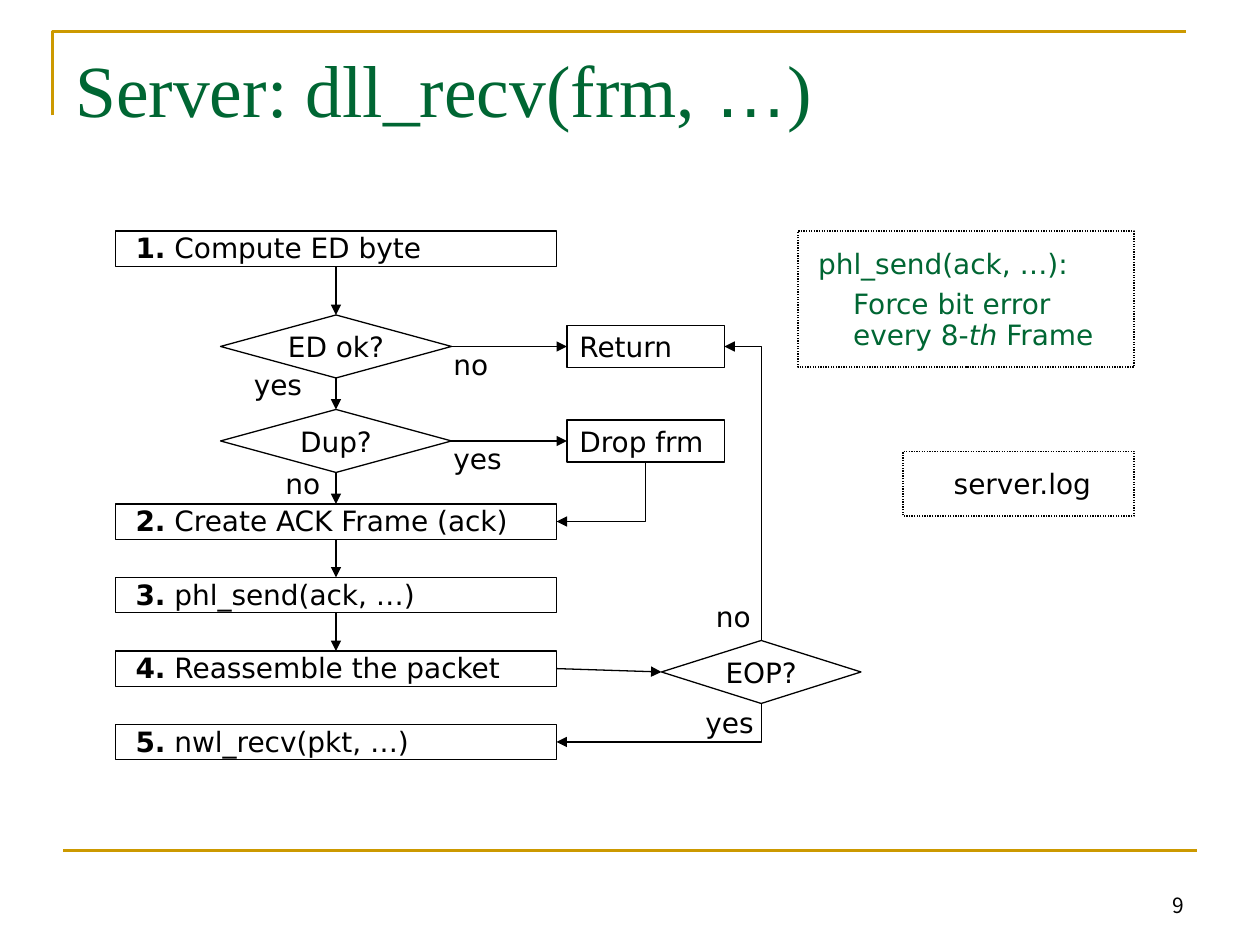
from lxml import etree
from pptx import Presentation
from pptx.dml.color import RGBColor
from pptx.enum import dml, shapes, text
from pptx.oxml import ns
from pptx.util import Pt

BLACK, GREEN, GOLD = "000000", "006633", "CC9900"
BODY, SERIF, SANS, NUMBER = "DejaVu Sans", "Times New Roman", "Arial", "Noto Sans CJK KR"
TOP, LEFT, BOTTOM, RIGHT = range(4)


def color(value):
    return RGBColor.from_string(value)


def style_line(line, value=BLACK, width=0.75):
    line.color.rgb = color(value)
    line.width = Pt(width)


def add_span(para, words, size=16, font=BODY, value=BLACK, bold=False, italic=False):
    span = para.add_run()
    span.text = words
    span.font.size, span.font.name = Pt(size), font
    span.font.color.rgb = color(value)
    span.font.bold, span.font.italic = bold, italic


def set_frame(box, insets=(7.2, 3.6, 7.2, 3.6), wrap=True, grow=False,
              anchor=text.MSO_ANCHOR.TOP, align=text.PP_ALIGN.LEFT):
    """Set up the text frame and return its first paragraph."""
    frame = box.text_frame
    frame.margin_left, frame.margin_top, frame.margin_right, frame.margin_bottom = map(Pt, insets)
    frame.word_wrap = wrap
    frame.auto_size = text.MSO_AUTO_SIZE.SHAPE_TO_FIT_TEXT if grow else text.MSO_AUTO_SIZE.NONE
    frame.vertical_anchor = anchor
    para = frame.paragraphs[0]
    para.alignment = align
    return para


def add_outline(page, kind, left, top, width, height):
    shape = page.shapes.add_shape(kind, Pt(left), Pt(top), Pt(width), Pt(height))
    shape.shadow.inherit = False
    shape.fill.background()
    style_line(shape.line)
    return shape


def add_step(page, top, number, words):
    box = add_outline(page, shapes.MSO_SHAPE.RECTANGLE, 66, top, 252, 20.16)
    para = set_frame(box, (11.5, 0, 0, 0), grow=True)
    add_span(para, f"{number}.", bold=True)
    add_span(para, " " + words)
    return box


def add_decision(page, left, top, width, words):
    box = add_outline(page, shapes.MSO_SHAPE.DIAMOND, left, top, width, 36)
    add_span(set_frame(box, wrap=False, anchor=text.MSO_ANCHOR.MIDDLE,
                       align=text.PP_ALIGN.CENTER), words)
    return box


def add_action(page, top, words):
    box = add_outline(page, shapes.MSO_SHAPE.RECTANGLE, 324, top, 90, 24)
    add_span(set_frame(box, wrap=False, anchor=text.MSO_ANCHOR.MIDDLE), words)
    return box


def add_note(page, left, top, width, height, right_inset, align=text.PP_ALIGN.LEFT):
    box = add_outline(page, shapes.MSO_SHAPE.RECTANGLE, left, top, width, height)
    box.line.dash_style = dml.MSO_LINE.ROUND_DOT
    return box, set_frame(box, (11.5, 8.6, right_inset, 8.6), grow=True, align=align)


def add_text(page, left, top, width, height, **frame):
    box = page.shapes.add_textbox(Pt(left), Pt(top), Pt(width), Pt(height))
    return set_frame(box, **frame)


def add_label(page, left, top, words, width, height=26.6, spacing=1.0, wrap=False):
    para = add_text(page, left, top, width, height, wrap=wrap, grow=True)
    para.line_spacing = spacing
    add_span(para, words)


def add_line(page, kind, start, end, value=BLACK, width=0.75):
    line = page.shapes.add_connector(kind, *map(Pt, (*start, *end)))
    style_line(line.line, value, width)
    etree.SubElement(line._element.spPr, ns.qn("a:effectLst"))
    return line


def add_head(line):
    etree.SubElement(line.line._get_or_add_ln(), ns.qn("a:tailEnd"), type="triangle")


def add_arrow(page, source, source_side, target, target_side):
    line = add_line(page, shapes.MSO_CONNECTOR.STRAIGHT, (0, 0), (0, 0))
    line.begin_connect(source, source_side)
    line.end_connect(target, target_side)
    add_head(line)


def add_corner(page, start, end):
    """Arrow that runs vertically from start, then left to end."""
    middle_x, middle_y = (start[0] + end[0]) / 2, (start[1] + end[1]) / 2
    half_x, half_y = (start[0] - end[0]) / 2, (end[1] - start[1]) / 2
    # The box is laid out before its quarter turn, so the sides swap
    line = add_line(page, shapes.MSO_CONNECTOR.ELBOW,
                    (middle_x - half_y, middle_y - half_x),
                    (middle_x + half_y, middle_y + half_x))
    properties = line._element.spPr
    properties.find(ns.qn("a:xfrm")).set("rot", "5400000")
    properties.find(ns.qn("a:prstGeom")).set("prst", "bentConnector2")
    add_head(line)


def add_page_frame(page):
    # Gold rules
    builder = page.shapes.build_freeform(Pt(30), Pt(66), scale=1.0)
    builder.add_line_segments([(Pt(30), Pt(18)), (Pt(678), Pt(18))], close=False)
    corner = builder.convert_to_shape()
    corner.shadow.inherit = False
    corner.fill.background()
    style_line(corner.line, GOLD, 1.5)
    add_line(page, shapes.MSO_CONNECTOR.STRAIGHT, (36, 486), (684, 486), GOLD, 1.5)

    # Page number and title
    number = add_text(page, 516, 492, 168, 36, anchor=text.MSO_ANCHOR.BOTTOM,
                      align=text.PP_ALIGN.RIGHT)
    add_span(number, "9", 12, NUMBER)
    title = add_text(page, 36, 21.6, 648, 90)
    for words, font in (("Server: dll_recv(frm, ", SERIF), ("…", SANS), (")", SERIF)):
        add_span(title, words, 42, font, GREEN)


def add_flow(page):
    # Steps, decisions and actions
    compute = add_step(page, 132, 1, "Compute ED byte")
    names = ("Create ACK Frame (ack)", "phl_send(ack, …)", "Reassemble the packet",
             "nwl_recv(pkt, …)")
    create, send, reassemble, _ = [
        add_step(page, 288 + 42 * i, i + 2, name) for i, name in enumerate(names)]
    valid = add_decision(page, 126, 180, 132, "ED ok?")
    duplicate = add_decision(page, 126, 234, 132, "Dup?")
    last = add_decision(page, 378, 366, 114, "EOP?")
    leave = add_action(page, 186, "Return")
    drop = add_action(page, 240, "Drop frm")

    # Straight arrows
    column = (compute, valid, duplicate, create, send, reassemble)
    for upper, lower in zip(column, column[1:]):
        add_arrow(page, upper, BOTTOM, lower, TOP)
    for source, target in ((valid, leave), (duplicate, drop), (reassemble, last)):
        add_arrow(page, source, RIGHT, target, LEFT)

    # Cornered arrows
    add_corner(page, (369, 264), (318, 298))
    add_corner(page, (435, 402), (318, 424))
    add_corner(page, (435, 366), (414, 198))

    # Branch labels
    add_label(page, 252, 195, "no", 34.6)
    add_label(page, 138, 210.2, "yes", 53.3, 22.3, 0.8, wrap=True)
    add_label(page, 252, 249, "yes", 41.8)
    add_label(page, 156, 261.4, "no", 34.6, 28, 1.1)
    add_label(page, 402, 339, "no", 34.6)
    add_label(page, 396, 399.6, "yes", 41.8)


def add_notes(page):
    _, log = add_note(page, 516, 258, 132, 36.9, 7.2, text.PP_ALIGN.CENTER)
    add_span(log, "server.log")

    box, heading = add_note(page, 456, 132, 192, 77.8, 0)
    add_span(heading, "phl_send(ack, …):", value=GREEN)
    lines = ((0.7, ("Force bit error",)), (0.4, ("every 8-", "th", " Frame")))
    for spacing, parts in lines:
        para = box.text_frame.add_paragraph()
        para._p.get_or_add_pPr().set("marL", str(Pt(20)))
        para.line_spacing, para.space_before = spacing, Pt(9)
        for part in parts:
            add_span(para, part, value=GREEN, italic=part == "th")


def main():
    deck = Presentation()
    deck.slide_width, deck.slide_height = Pt(720), Pt(540)
    page = deck.slides.add_slide(deck.slide_layouts[6])
    add_page_frame(page)
    add_flow(page)
    add_notes(page)
    deck.save("out.pptx")


if __name__ == "__main__":
    main()
